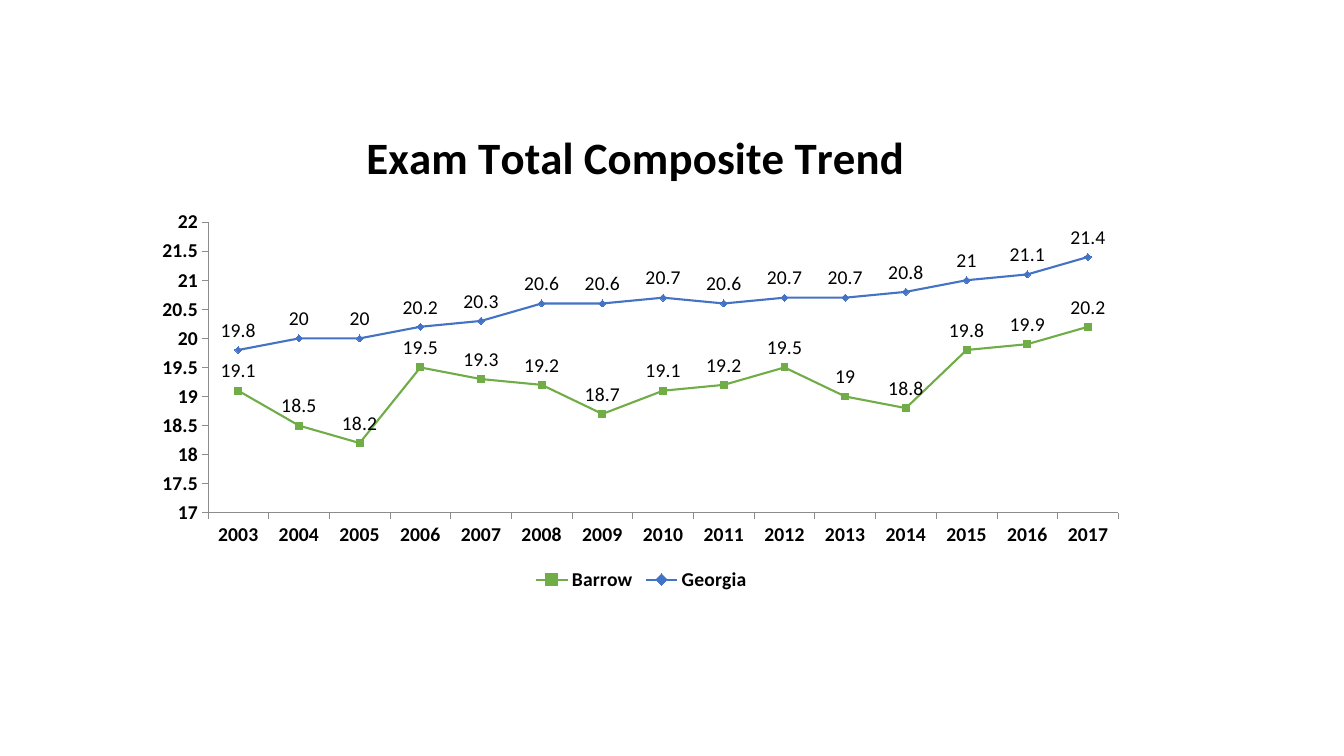
from pptx import Presentation
from pptx.chart.data import CategoryChartData
from pptx.dml.color import RGBColor
from pptx.enum.chart import (XL_CHART_TYPE, XL_LABEL_POSITION,
                             XL_LEGEND_POSITION, XL_MARKER_STYLE, XL_TICK_MARK)
from pptx.oxml import parse_xml
from pptx.oxml.ns import nsdecls, qn
from pptx.util import Inches, Pt

LINES = XL_CHART_TYPE.LINE_MARKERS
ABOVE = XL_LABEL_POSITION.ABOVE
BOTTOM = XL_LEGEND_POSITION.BOTTOM
SQUARE, DIAMOND = XL_MARKER_STYLE.SQUARE, XL_MARKER_STYLE.DIAMOND
OUT, NONE = XL_TICK_MARK.OUTSIDE, XL_TICK_MARK.NONE

BLACK = RGBColor(0x00, 0x00, 0x00)
GRAY = RGBColor(0x8C, 0x8C, 0x8C)
GREEN = RGBColor(0x70, 0xAD, 0x47)
BLUE = RGBColor(0x44, 0x72, 0xC4)

YEARS = [str(year) for year in range(2003, 2018)]
SCORES = {
    "Barrow": (GREEN, SQUARE, [19.1, 18.5, 18.2, 19.5, 19.3, 19.2, 18.7, 19.1,
                               19.2, 19.5, 19, 18.8, 19.8, 19.9, 20.2]),
    "Georgia": (BLUE, DIAMOND, [19.8, 20, 20, 20.2, 20.3, 20.6, 20.6, 20.7,
                                20.6, 20.7, 20.7, 20.8, 21, 21.1, 21.4]),
}
PLAIN = {"name": "Calibri", "size": Pt(14), "bold": False}
BOLD = {**PLAIN, "bold": True}
HEAD = {**BOLD, "size": Pt(32)}


def put(item, values):
    """Set each attribute of the item from a dict."""
    for key, value in values.items():
        setattr(item, key, value)


def style(font, values):
    """Format a font in black."""
    put(font, values)
    font.color.rgb = BLACK


def place(parent, index, **sides):
    """Fix the layout of a chart part in percent of the chart size."""
    for old in parent.findall(qn("c:layout")):
        parent.remove(old)
    inner = '<c:layoutTarget val="inner"/>' if "w" in sides else ""
    modes = "".join(f'<c:{key}Mode val="edge"/>' for key in sides if key in "xy")
    sizes = "".join(f'<c:{key} val="{value / 100:.3f}"/>'
                    for key, value in sides.items())
    parent.insert(index, parse_xml(
        f'<c:layout {nsdecls("c")}><c:manualLayout>{inner}{modes}{sizes}'
        '</c:manualLayout></c:layout>'))


def add_trend(slide):
    """Add the line chart and return it."""
    data = CategoryChartData()
    data.categories = YEARS
    for name, (_, _, scores) in SCORES.items():
        data.add_series(name, scores)
    frame = slide.shapes.add_chart(LINES, Inches(1.42), Inches(1.02),
                                   Inches(9.88), Inches(4.89), data)
    chart = frame.chart
    style(chart.font, PLAIN)
    chart.plots[0].vary_by_categories = False
    space = chart.plots[0]._element.getparent()
    place(space, 0, x=6.5, y=24.2, w=91.4, h=59)
    return chart


def add_title(chart, text):
    """Set the chart title."""
    title = chart.chart_title
    para = title.text_frame.paragraphs[0]
    run = para.add_run()
    run.text = text
    style(run.font, HEAD)
    place(title._element, 1, x=21.6, y=3)


def add_key(chart):
    """Add the legend below the plot."""
    chart.has_legend = True
    put(chart.legend, {"position": BOTTOM, "include_in_layout": False})
    style(chart.legend.font, BOLD)


def style_axis(axis, values):
    """Format one axis with its ticks and labels."""
    put(axis, {"has_major_gridlines": False, "major_tick_mark": OUT,
               "minor_tick_mark": NONE, **values})
    style(axis.tick_labels.font, BOLD)
    axis.format.line.color.rgb = GRAY
    axis.format.line.width = Pt(0.5)


def style_series(series, color, shape):
    """Format one line with its markers and value labels."""
    series.smooth = False
    line, marker, labels = series.format.line, series.marker, series.data_labels
    line.color.rgb = color
    line.width = Pt(1.5)
    put(marker, {"style": shape, "size": 5})
    marker.format.fill.solid()
    marker.format.fill.fore_color.rgb = color
    marker.format.line.color.rgb = color
    put(labels, {"show_value": True, "position": ABOVE})
    style(labels.font, PLAIN)


def main():
    """Build the slide and save it."""
    deck = Presentation()
    put(deck, {"slide_width": Inches(13.33), "slide_height": Inches(7.5)})
    slide = deck.slides.add_slide(deck.slide_layouts[6])
    chart = add_trend(slide)
    add_title(chart, "Exam Total Composite Trend")
    add_key(chart)
    style_axis(chart.category_axis, {})
    style_axis(chart.value_axis, {"minimum_scale": 17, "maximum_scale": 22,
                                  "major_unit": 0.5})
    for series in chart.plots[0].series:
        color, shape, _ = SCORES[series.name]
        style_series(series, color, shape)
    deck.save("out.pptx")


if __name__ == "__main__":
    main()
